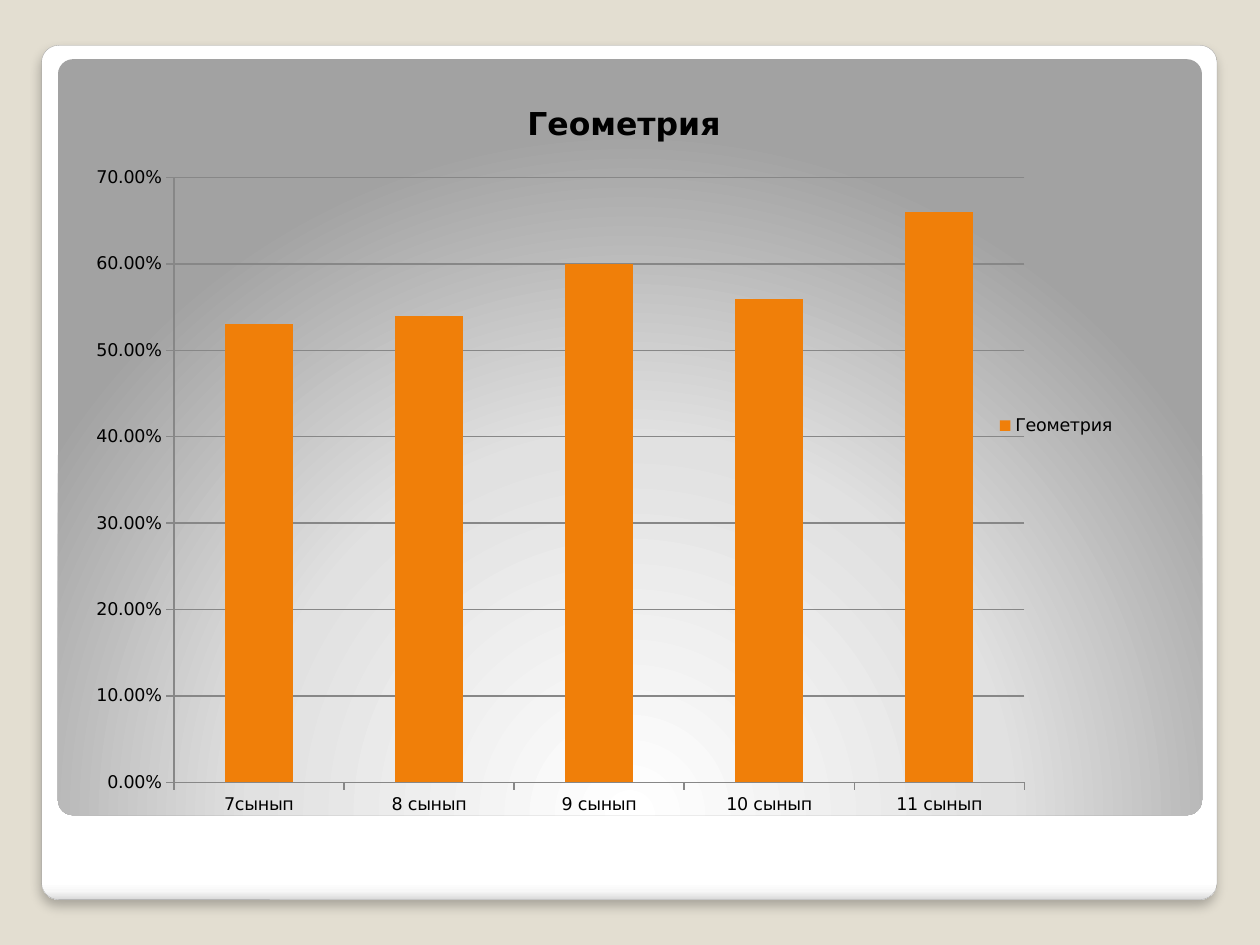
from dataclasses import dataclass

from pptx import Presentation
from pptx.chart.data import CategoryChartData
from pptx.dml.color import RGBColor
from pptx.enum.chart import XL_CHART_TYPE as Kind, XL_LEGEND_POSITION as Side
from pptx.enum.chart import XL_TICK_MARK as Tick
from pptx.enum.shapes import MSO_SHAPE as Geom
from pptx.oxml import parse_xml
from pptx.oxml.ns import nsdecls
from pptx.util import Inches, Pt

SAND = RGBColor(0xE3, 0xDE, 0xD1)
EDGE = RGBColor(0xA4, 0xA4, 0xA4)
GRID = RGBColor(0x87, 0x87, 0x87)
AMBER = RGBColor(0xF0, 0x7F, 0x09)
BLACK = RGBColor(0, 0, 0)
FONT = "DejaVu Sans"
NAME = "Геометрия "
WIDE, HIGH = 8.82, 5.98  # chart size
MARKS = {"7сынып": 0.53, "8 сынып": 0.54, "9 сынып": 0.6,
         "10 сынып": 0.56, "11 сынып": 0.66}


@dataclass
class Panel:
    box: tuple[float, float, float, float]
    stops: list[tuple[int, str]]
    course: str
    framed: bool = False


PANELS = [
    Panel((0.33, 0.36, 9.33, 6.78),
          [(0, "FFFFFF"), (98, "FFFFFF"), (99, "F7F7F7"), (100, "DADADA")],
          '<a:lin ang="5400000" scaled="0"/>', framed=True),
    Panel((0.46, 0.47, 9.08, 6),
          [(0, "FFFFFF"), (55, "E1E1E1"), (100, "A2A2A2")],
          '<a:path path="circle"><a:fillToRect l="50000" t="175000" '
          'r="50000" b="-75000"/></a:path>'),
]


def draw_panel(slide, panel: Panel) -> None:
    shape = slide.shapes.add_shape(Geom.ROUNDED_RECTANGLE, *map(Inches, panel.box))
    shape.adjustments[0] = 0.02
    shape.shadow.inherit = False
    # Gradient fill
    shape.fill.solid()
    stops = "".join(f'<a:gs pos="{pos * 1000}"><a:srgbClr val="{tint}"/></a:gs>'
                    for pos, tint in panel.stops)
    props = shape._element.spPr
    solid = props.find("{*}solidFill")
    props.replace(solid, parse_xml(
        f'<a:gradFill {nsdecls("a")} rotWithShape="1"><a:gsLst>{stops}</a:gsLst>'
        f'{panel.course}</a:gradFill>'))
    if not panel.framed:
        shape.line.fill.background()
        return
    # Thin edge and soft shadow
    shape.line.color.rgb = EDGE
    shape.line.width = Pt(0.16)
    props.find("{*}effectLst").append(parse_xml(
        f'<a:outerShdw {nsdecls("a")} blurRad="{Pt(6)}" dist="{Pt(4)}" '
        'dir="5400000" algn="tl" rotWithShape="0"><a:srgbClr val="000000">'
        '<a:alpha val="25000"/></a:srgbClr></a:outerShdw>'))


def place(part, after: str, inner: bool = False, **spots: float) -> None:
    """Set a manual layout, in inches from the corner of the chart."""
    for old in part.findall("{*}layout"):
        part.remove(old)
    target = '<c:layoutTarget val="inner"/>' if inner else ""
    modes = "".join(f'<c:{key}Mode val="edge"/>' for key in "xy")
    sizes = "".join(f'<c:{key} val="{val / (WIDE if key in "xw" else HIGH)}"/>'
                    for key, val in spots.items())
    layout = parse_xml(f'<c:layout {nsdecls("c")}><c:manualLayout>{target}{modes}'
                       f'{sizes}</c:manualLayout></c:layout>')
    prior = part.find("{*}" + after) if after else None
    if prior is None:
        part.insert(0, layout)
    else:
        prior.addnext(layout)


def draw_chart(slide) -> None:
    data = CategoryChartData(number_format="0.00%")
    data.categories = list(MARKS)
    data.add_series(NAME, list(MARKS.values()))
    box = map(Inches, (0.59, 0.6, WIDE, HIGH))
    chart = slide.shapes.add_chart(Kind.COLUMN_CLUSTERED, *box, data).chart
    chart.font.size = Pt(10)
    chart.font.name = FONT
    chart.font.color.rgb = BLACK

    # Title
    chart.has_title = True
    run = chart.chart_title.text_frame.paragraphs[0].add_run()
    run.text = NAME
    run.font.size = Pt(18)
    run.font.bold = True
    run.font.name = FONT
    run.font.color.rgb = BLACK
    place(chart.chart_title._element, "tx", x=3.55, y=0.17)

    # Legend
    chart.has_legend = True
    chart.legend.position = Side.RIGHT
    chart.legend.include_in_layout = False
    place(chart.legend._element, "legendPos", x=7.3, y=2.66)

    # Axes
    for axis in (chart.category_axis, chart.value_axis):
        axis.major_tick_mark = Tick.OUTSIDE
        axis.minor_tick_mark = Tick.NONE
        axis.format.line.color.rgb = GRID
        axis.format.line.width = Pt(0.75)
    scale = chart.value_axis
    scale.minimum_scale, scale.maximum_scale, scale.major_unit = 0, 0.7, 0.1
    scale.tick_labels.number_format = "0.00%"
    scale.tick_labels.number_format_is_linked = False
    scale.major_gridlines.format.line.color.rgb = GRID
    scale.major_gridlines.format.line.width = Pt(0.75)

    # Columns
    plot = chart.plots[0]
    plot.gap_width = 150
    plot.vary_by_categories = False
    fill = plot.series[0].format.fill
    fill.solid()
    fill.fore_color.rgb = AMBER
    area = chart._chartSpace.chart.plotArea
    place(area, "", inner=True, x=0.79, y=0.81, w=6.75, h=4.8)


def main() -> None:
    deck = Presentation()
    deck.slide_width, deck.slide_height = Inches(10), Inches(7.5)
    slide = deck.slides.add_slide(deck.slide_layouts[6])
    slide.background.fill.solid()
    slide.background.fill.fore_color.rgb = SAND
    for panel in PANELS:
        draw_panel(slide, panel)
    draw_chart(slide)
    deck.save("out.pptx")


if __name__ == "__main__":
    main()
